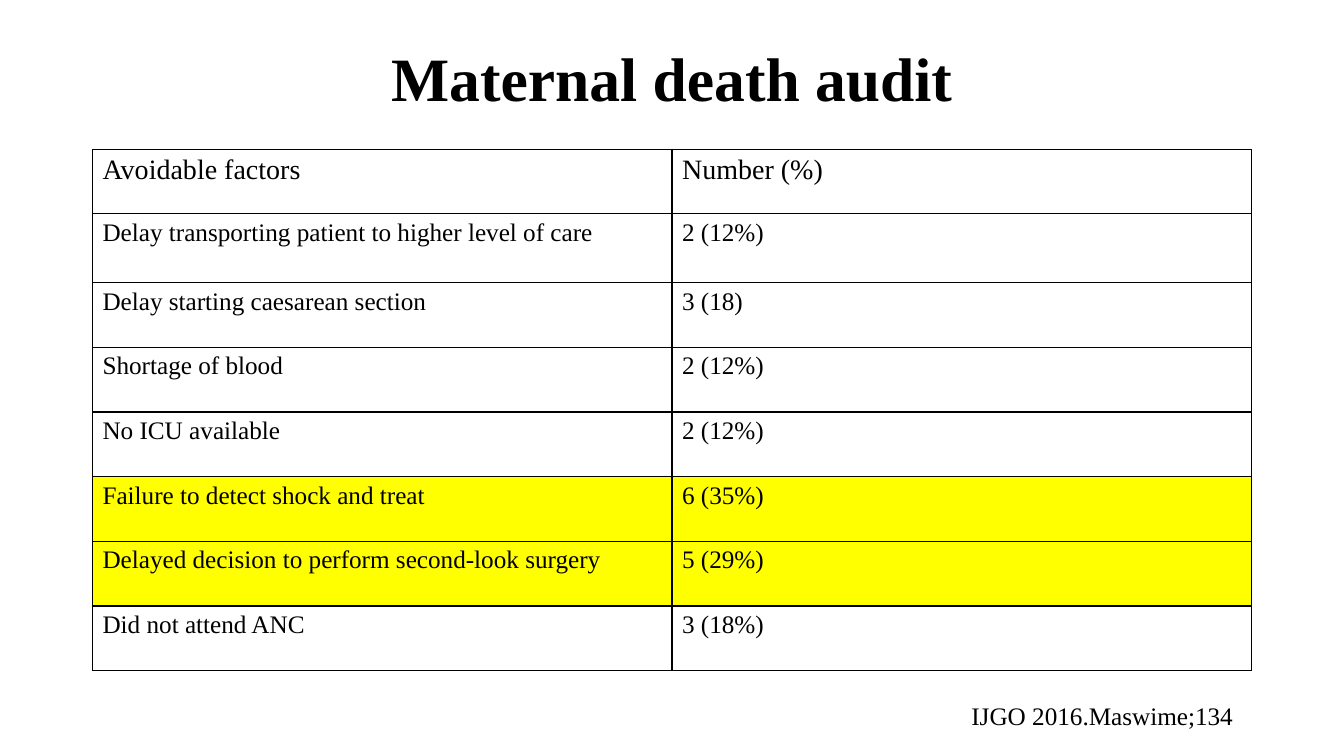
from dataclasses import dataclass
from typing import Any

from lxml import etree
from pptx import Presentation
from pptx.dml.color import RGBColor
from pptx.enum.text import MSO_ANCHOR, PP_ALIGN
from pptx.util import Cm, Pt

TOP = MSO_ANCHOR.TOP
CENTER = PP_ALIGN.CENTER
LEFT = PP_ALIGN.LEFT
FONT = "Times New Roman"
BLACK = "000000"
YELLOW = "FFFF00"
MARGIN = Cm(2.33)
CONTENT_WIDTH = Cm(29.21)
DRAWING = "http://schemas.openxmlformats.org/drawingml/2006/main"


@dataclass(frozen=True)
class Factor:
    """One row of the audit table."""
    label: str
    number: str
    size: float = 18
    height: float = 1.63
    fill: str | None = None


FACTORS = [
    Factor("Avoidable factors", "Number (%)", size=20),
    Factor("Delay transporting patient to higher level of care", "2 (12%)", height=1.73),
    Factor("Delay starting caesarean section", "3 (18)"),
    Factor("Shortage of blood", "2 (12%)"),
    Factor("No ICU available", "2 (12%)"),
    Factor("Failure to detect shock and treat", "6 (35%)", fill=YELLOW),
    Factor("Delayed decision to perform second-look surgery", "5 (29%)", fill=YELLOW),
    Factor("Did not attend ANC", "3 (18%)"),
]


def color(value: str) -> RGBColor:
    """Turn a hex string into a colour."""
    return RGBColor.from_string(value)


def apply(target: Any, values: dict[str, Any]) -> None:
    """Set every listed attribute on the target."""
    for name, value in values.items():
        setattr(target, name, value)


def write(frame: Any, text: str, size: float, bold: bool = False,
          align: PP_ALIGN = LEFT) -> None:
    """Write one formatted paragraph into a text frame."""
    para = frame.paragraphs[0]
    para.alignment = align
    span = para.add_run()
    span.text = text
    apply(span.font, {"name": FONT, "size": Pt(size), "bold": bold})
    span.font.color.rgb = color(BLACK)


def add_borders(cell: Any) -> None:
    """Draw a thin black line on all four sides of a cell."""
    properties = cell._tc.get_or_add_tcPr()
    for index, side in enumerate(("lnL", "lnR", "lnT", "lnB")):
        line = etree.Element(f"{{{DRAWING}}}{side}", w=str(Pt(1)))
        fill = etree.SubElement(line, f"{{{DRAWING}}}solidFill")
        etree.SubElement(fill, f"{{{DRAWING}}}srgbClr", val=BLACK)
        properties.insert(index, line)


def add_title(page: Any) -> None:
    """Place and format the title placeholder."""
    title = page.shapes.title
    apply(title, {"left": MARGIN, "top": Cm(1.02),
                  "width": CONTENT_WIDTH, "height": Cm(3.68)})
    apply(title.text_frame, {"vertical_anchor": TOP, "word_wrap": True,
                             "margin_top": Cm(0.2)})
    title.text_frame.paragraphs[0].line_spacing = 0.9
    write(title.text_frame, "Maternal death audit", 44, True, CENTER)


def add_factor_table(page: Any) -> None:
    """Build the table of avoidable factors."""
    height = Cm(sum(factor.height for factor in FACTORS))
    table = page.shapes.add_table(len(FACTORS), 2, MARGIN, Cm(3.76),
                                  CONTENT_WIDTH, height).table
    apply(table, {"first_row": False, "horz_banding": False})
    for row, factor in zip(table.rows, FACTORS):
        row.height = Cm(factor.height)
        for cell, text in zip(row.cells, (factor.label, factor.number)):
            write(cell.text_frame, text, factor.size)
            if factor.fill:
                cell.fill.solid()
                cell.fill.fore_color.rgb = color(factor.fill)
            else:
                cell.fill.background()
            add_borders(cell)


def add_citation(page: Any) -> None:
    """Add the reference below the table."""
    box = page.shapes.add_textbox(Cm(24.23), Cm(17.53), Cm(7.16), Cm(1.02))
    box.text_frame.word_wrap = False
    write(box.text_frame, "IJGO 2016.Maswime;134", 18)


def main() -> None:
    """Build and save the deck."""
    deck = Presentation()
    apply(deck, {"slide_width": Cm(33.87), "slide_height": Cm(19.05)})
    page = deck.slides.add_slide(deck.slide_layouts.get_by_name("Title Only"))
    add_title(page)
    add_factor_table(page)
    add_citation(page)
    deck.save("out.pptx")


if __name__ == "__main__":
    main()
